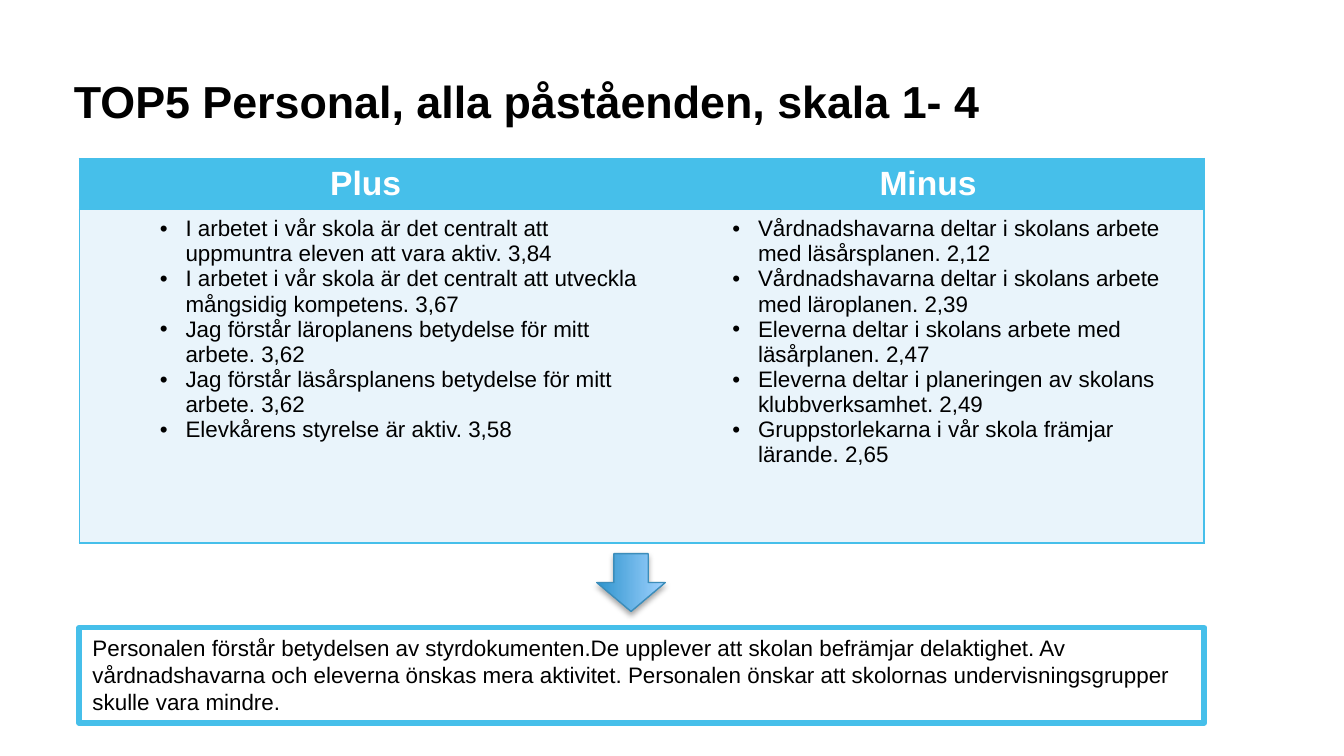
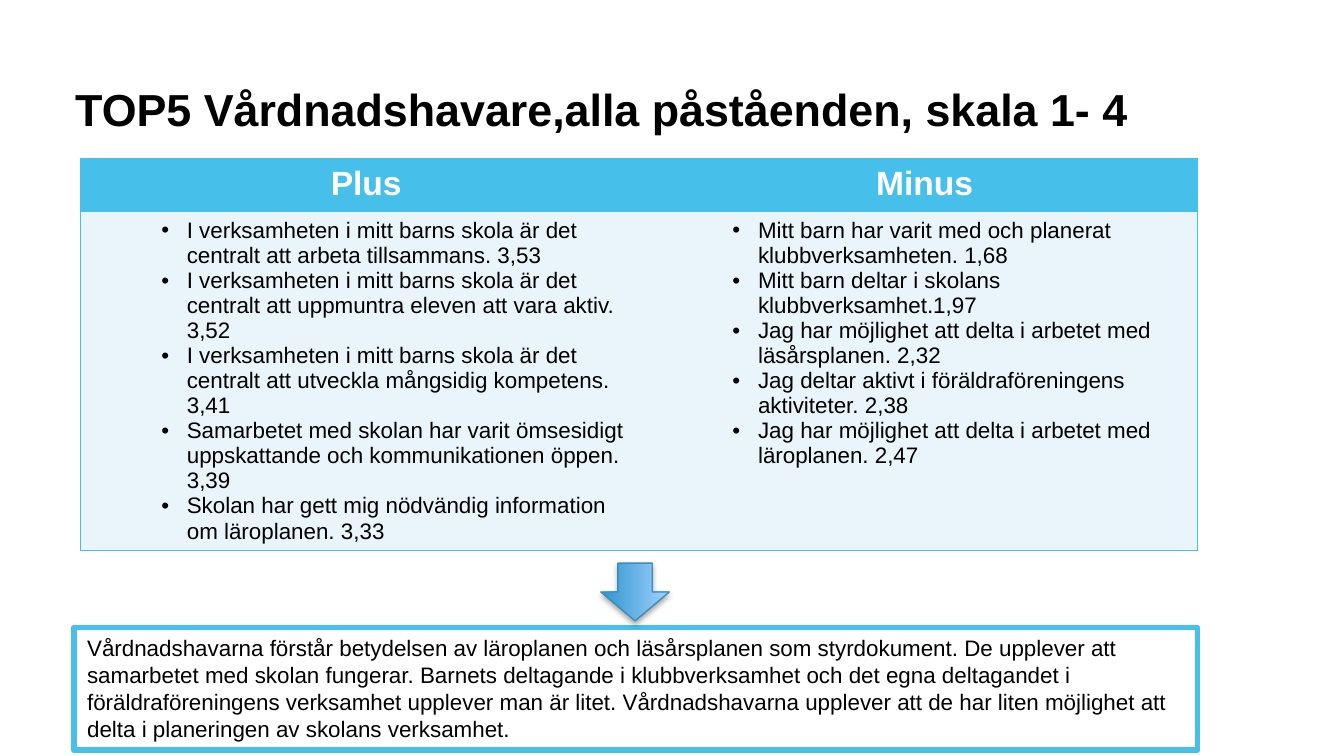
import dataclasses

import lxml.etree
import pptx
import pptx.dml.color
import pptx.enum.shapes
import pptx.enum.text
import pptx.oxml
import pptx.oxml.ns
import pptx.util

Inches = pptx.util.Inches
Pt = pptx.util.Pt
RGB = pptx.dml.color.RGBColor.from_string
ALIGN = pptx.enum.text.PP_ALIGN


@dataclasses.dataclass(frozen=True)
class Theme:
    accent: str = "46BFEA"
    pale: str = "E9F4FB"
    white: str = "FFFFFF"
    black: str = "000000"
    arrow_start: str = "2E94CD"
    arrow_end: str = "A1D2FF"
    arrow_line: str = "3C8DBA"
    font: str = "Arial"
    title_size: int = 24
    header_size: int = 18
    body_size: int = 12


THEME = Theme()

# Content of each slide, with the places that differ
SLIDES = [
    {
        "title": "TOP5 Personal, alla påståenden, skala 1- 4",
        "title_box": (0.55, 0.18, 8.14, 0.77),
        "table_left": 0.59,
        "columns": (4.26, 4.11),
        "rows": (0.38, 2.48),
        "plus": [
            "I arbetet i vår skola är det centralt att uppmuntra eleven att vara aktiv. 3,84",
            "I arbetet i vår skola är det centralt att utveckla mångsidig kompetens. 3,67",
            "Jag förstår läroplanens betydelse för mitt arbete. 3,62",
            "Jag förstår läsårsplanens betydelse för mitt arbete. 3,62",
            "Elevkårens styrelse är aktiv. 3,58",
        ],
        "minus": [
            "Vårdnadshavarna deltar i skolans arbete med läsårsplanen. 2,12",
            "Vårdnadshavarna deltar i skolans arbete med läroplanen. 2,39",
            "Eleverna deltar i skolans arbete med läsårplanen. 2,47",
            "Eleverna deltar i planeringen av skolans klubbverksamhet. 2,49",
            "Gruppstorlekarna i vår skola främjar lärande. 2,65",
        ],
        "arrow": (4.48, 4.08),
        "summary_box": (0.59, 4.67, 8.37, 0.71),
        "summary": "Personalen förstår betydelsen av styrdokumenten.De upplever att skolan "
                   "befrämjar delaktighet. Av vårdnadshavarna och eleverna önskas mera "
                   "aktivitet. Personalen önskar att skolornas undervisningsgrupper skulle "
                   "vara mindre.",
    },
    {
        "title": "TOP5 Vårdnadshavare,alla påståenden, skala 1- 4",
        "title_box": (0.56, 0.19, 8.27, 0.82),
        "table_left": 0.6,
        "columns": (4.25, 4.06),
        "rows": (0.39, 2.44),
        "plus": [
            "I verksamheten i mitt barns skola är det centralt att arbeta tillsammans. 3,53",
            "I verksamheten i mitt barns skola är det centralt att uppmuntra eleven att vara "
            "aktiv. 3,52",
            "I verksamheten i mitt barns skola är det centralt att utveckla mångsidig "
            "kompetens. 3,41",
            "Samarbetet med skolan har varit ömsesidigt uppskattande och kommunikationen "
            "öppen. 3,39",
            "Skolan har gett mig nödvändig information om läroplanen. 3,33",
        ],
        "minus": [
            "Mitt barn har varit med och planerat klubbverksamheten. 1,68",
            "Mitt barn deltar i skolans klubbverksamhet.1,97",
            "Jag har möjlighet att delta i arbetet med läsårsplanen. 2,32",
            "Jag deltar aktivt i föräldraföreningens aktiviteter. 2,38",
            "Jag har möjlighet att delta i arbetet med läroplanen. 2,47",
        ],
        "arrow": (4.51, 4.15),
        "summary_box": (0.55, 4.67, 8.36, 0.91),
        "summary": "Vårdnadshavarna förstår betydelsen av läroplanen och läsårsplanen som "
                   "styrdokument. De upplever att samarbetet med skolan fungerar. Barnets "
                   "deltagande i klubbverksamhet och det egna deltagandet i "
                   "föräldraföreningens verksamhet upplever man är litet. Vårdnadshavarna "
                   "upplever att de har liten möjlighet att delta i planeringen av skolans "
                   "verksamhet.",
    },
]


def set_attributes(target, values):
    for name, value in values.items():
        setattr(target, name, value)


def add_xml(parent, tag, **attributes):
    return lxml.etree.SubElement(parent, pptx.oxml.ns.qn(tag), attributes)


def write_paragraph(paragraph, text, size, color=THEME.black, bold=False, **layout):
    set_attributes(paragraph, layout)
    run = paragraph.add_run()
    run.text = text
    set_attributes(run.font, {"name": THEME.font, "size": Pt(size), "bold": bold})
    run.font.color.rgb = RGB(color)


def add_title(slide, text, box):
    title = slide.shapes.title
    left, top, width, height = map(Inches, box)
    set_attributes(title, {"left": left, "top": top, "width": width, "height": height})
    set_attributes(title.text_frame, {
        "margin_left": 0, "margin_top": 0, "margin_right": Inches(0.1), "margin_bottom": 0,
        "vertical_anchor": pptx.enum.text.MSO_ANCHOR.BOTTOM,
        "auto_size": pptx.enum.text.MSO_AUTO_SIZE.NONE, "word_wrap": True,
    })
    write_paragraph(title.text_frame.paragraphs[0], text, THEME.title_size, bold=True,
                    alignment=ALIGN.LEFT, line_spacing=Pt(33))


def format_cell(cell, fill, outer_side):
    """Fill a cell and draw its borders on top, bottom and the outer side."""
    properties = cell._tc.get_or_add_tcPr()
    for side in "LRTB":
        if side in ("T", "B", outer_side):
            line = add_xml(properties, f"a:ln{side}", w=str(Pt(1)))
            add_xml(add_xml(line, "a:solidFill"), "a:srgbClr", val=THEME.accent)
        else:
            add_xml(add_xml(properties, f"a:ln{side}", w="0"), "a:noFill")
    cell.fill.solid()
    cell.fill.fore_color.rgb = RGB(fill)


def write_bullets(cell, statements):
    frame = cell.text_frame
    for index, statement in enumerate(statements):
        paragraph = frame.add_paragraph() if index else frame.paragraphs[0]
        write_paragraph(paragraph, statement, THEME.body_size, level=1)
        properties = paragraph._p.get_or_add_pPr()
        properties.set("marL", str(Inches(0.69)))
        properties.set("indent", str(Inches(-0.19)))
        add_xml(properties, "a:buFont", typeface=THEME.font)
        add_xml(properties, "a:buChar", char="•")


def add_plus_minus_table(slide, content):
    columns, rows = content["columns"], content["rows"]
    table = slide.shapes.add_table(
        2, 2, Inches(content["table_left"]), Inches(1.18),
        Inches(sum(columns)), Inches(sum(rows))).table
    table.horz_banding = False
    for row, height in zip(table.rows, rows):
        row.height = Inches(height)
    headings = (("Plus", "plus", "L"), ("Minus", "minus", "R"))
    for index, (heading, key, outer_side) in enumerate(headings):
        table.columns[index].width = Inches(columns[index])
        header, body = table.cell(0, index), table.cell(1, index)
        format_cell(header, THEME.accent, outer_side)
        format_cell(body, THEME.pale, outer_side)
        write_paragraph(header.text_frame.paragraphs[0], heading, THEME.header_size,
                        THEME.white, bold=True, alignment=ALIGN.CENTER)
        write_bullets(body, content[key])


def add_summary(slide, text, box):
    shape = slide.shapes.add_shape(
        pptx.enum.shapes.MSO_SHAPE.RECTANGLE, *map(Inches, box))
    shape.shadow.inherit = False
    shape.fill.solid()
    shape.fill.fore_color.rgb = RGB(THEME.white)
    shape.line.color.rgb = RGB(THEME.accent)
    shape.line.width = Pt(3)
    set_attributes(shape.text_frame, {
        "word_wrap": True, "vertical_anchor": pptx.enum.text.MSO_ANCHOR.TOP,
        "auto_size": pptx.enum.text.MSO_AUTO_SIZE.SHAPE_TO_FIT_TEXT,
    })
    write_paragraph(shape.text_frame.paragraphs[0], text, THEME.body_size,
                    alignment=ALIGN.LEFT)


def add_down_arrow(slide, position):
    arrow = slide.shapes.add_shape(
        pptx.enum.shapes.MSO_SHAPE.RIGHT_ARROW, *map(Inches, position),
        Inches(0.43), Inches(0.51))
    arrow.rotation = 90
    arrow.fill.gradient()
    arrow.fill.gradient_angle = 90
    for stop, color in zip(arrow.fill.gradient_stops, (THEME.arrow_start, THEME.arrow_end)):
        stop.color.rgb = RGB(color)
    arrow.line.color.rgb = RGB(THEME.arrow_line)
    arrow.line.width = Pt(0.75)
    # Soft shadow straight below
    arrow.shadow.inherit = False
    effects = arrow._element.spPr.find(pptx.oxml.ns.qn("a:effectLst"))
    shadow = add_xml(effects, "a:outerShdw", blurRad=str(Pt(3.1)), dist=str(Pt(1.8)),
                     dir="5400000", rotWithShape="0")
    add_xml(add_xml(shadow, "a:srgbClr", val=THEME.black), "a:alpha", val="35000")


def main():
    presentation = pptx.Presentation()
    # Widescreen, 16:9
    presentation.slide_width = Inches(10)
    presentation.slide_height = Inches(10 * 9 / 16)
    title_only = presentation.slide_layouts[5]
    for content in SLIDES:
        slide = presentation.slides.add_slide(title_only)
        add_title(slide, content["title"], content["title_box"])
        add_plus_minus_table(slide, content)
        add_summary(slide, content["summary"], content["summary_box"])
        add_down_arrow(slide, content["arrow"])
    presentation.save("out.pptx")


if __name__ == "__main__":
    main()
